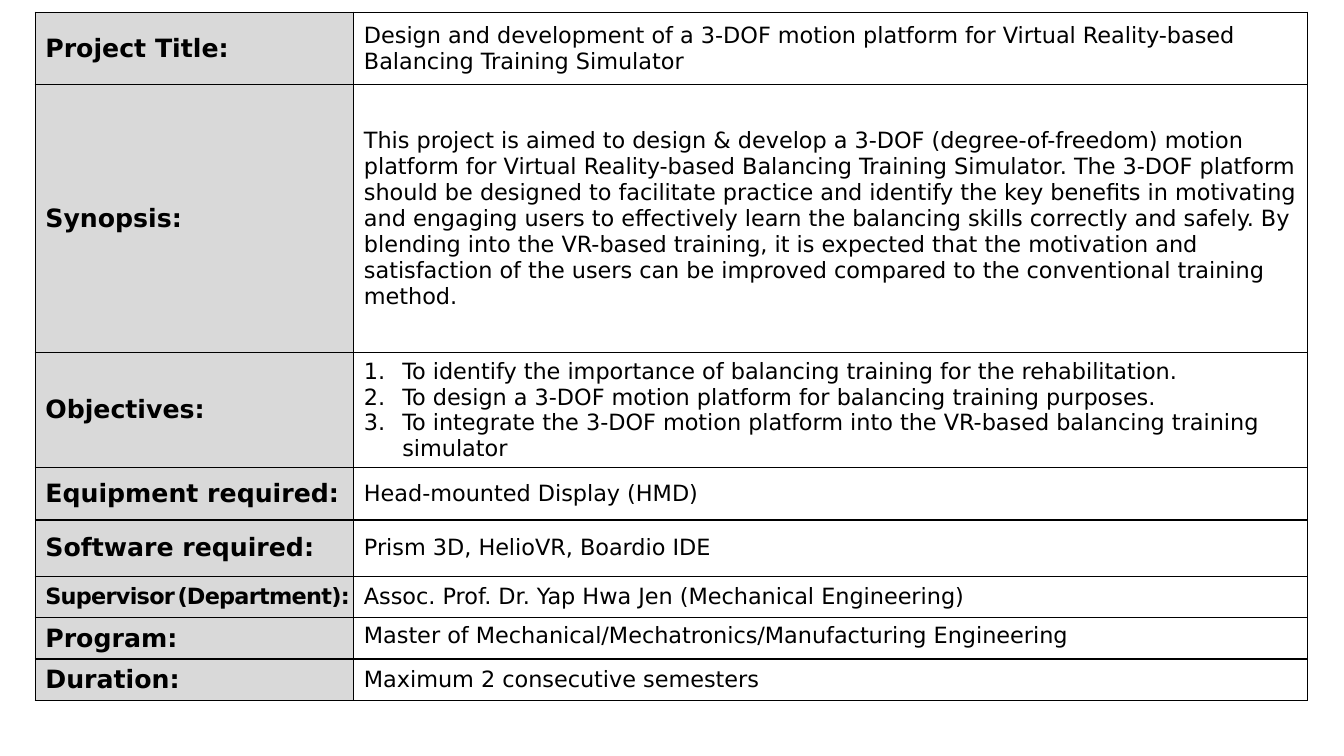
"""Build a one-slide project proposal table."""
from lxml.etree import SubElement
from pptx import Presentation
from pptx.dml.color import RGBColor
from pptx.enum.text import MSO_VERTICAL_ANCHOR as Anchor
from pptx.oxml import parse_xml
from pptx.oxml.ns import nsdecls, qn
from pptx.util import Inches, Pt

BLACK = RGBColor(0x00, 0x00, 0x00)
WHITE = RGBColor(0xFF, 0xFF, 0xFF)
LABEL_GREY = RGBColor(0xD9, 0xD9, 0xD9)
FONT = "DejaVu Sans"
LABEL_SIZE, BODY_SIZE, GAP_SIZE = 18, 16, 5
LEFT, TOP = 0.35, 0.12
COLUMNS = (3.16, 9.46)
NUMBER_INDENT = 0.38
TIGHT_SPACING = "-50"

PROJECT = (
    (0.72, "Project Title:", (
        "Design and development of a 3-DOF motion platform for Virtual "
        "Reality-based Balancing Training Simulator",)),
    (2.66, "Synopsis:", (
        "This project is aimed to design & develop a 3-DOF (degree-of-freedom) "
        "motion platform for Virtual Reality-based Balancing Training Simulator. "
        "The 3-DOF platform should be designed to facilitate practice and identify "
        "the key benefits in motivating and engaging users to effectively learn the "
        "balancing skills correctly and safely. By blending into the VR-based "
        "training, it is expected that the motivation and satisfaction of the users "
        "can be improved compared to the conventional training method.",)),
    (1.14, "Objectives:", (
        "To identify the importance of balancing training for the rehabilitation.",
        "To design a 3-DOF motion platform for balancing training purposes.",
        "To integrate the 3-DOF motion platform into the VR-based balancing "
        "training simulator")),
    (0.52, "Equipment required:", ("Head-mounted Display (HMD)",)),
    (0.56, "Software required:", ("Prism 3D, HelioVR, Boardio IDE",)),
    (0.41, "Supervisor (Department):", (
        "Assoc. Prof. Dr. Yap Hwa Jen (Mechanical Engineering)",)),
    (0.41, "Program:", (
        "Master of Mechanical/Mechatronics/Manufacturing Engineering",)),
    (0.41, "Duration:", ("Maximum 2 consecutive semesters",)),
)


def style_cell(cell, fill, anchor=Anchor.MIDDLE):
    """Fill a cell, anchor its text and rule all four sides."""
    cell.fill.solid()
    cell.fill.fore_color.rgb = fill
    cell.vertical_anchor = anchor
    properties = cell._tc.get_or_add_tcPr()
    for index, side in enumerate("LRTB"):
        properties.insert(index, parse_xml(
            f'<a:ln{side} {nsdecls("a")} w="{Pt(1)}"><a:solidFill>'
            f'<a:srgbClr val="{BLACK}"/></a:solidFill></a:ln{side}>'))


def style_font(font, size, bold=False):
    """Apply the slide's typeface and colour."""
    font.name = FONT
    font.size = Pt(size)
    font.bold = bold
    font.color.rgb = BLACK


def write_label(cell, text):
    """Write a bold row label."""
    para = cell.text_frame.paragraphs[0]
    para.text = text
    style_font(para.font, LABEL_SIZE, bold=True)


def write_tight_label(cell, text):
    """Write a condensed two-word label with a narrow gap."""
    cell.margin_right = 0
    first, gap, second = text.partition(" ")
    para = cell.text_frame.paragraphs[0]
    for part, size in ((first, BODY_SIZE), (gap, GAP_SIZE), (second, BODY_SIZE)):
        span = para.add_run()
        span.text = part
        style_font(span.font, size, bold=True)
        span._r.get_or_add_rPr().set("spc", TIGHT_SPACING)


def number_paragraph(para):
    """Give a paragraph an automatic number and hanging indent."""
    properties = para._p.get_or_add_pPr()
    properties.set("marL", str(Inches(NUMBER_INDENT)))
    properties.set("indent", str(-Inches(NUMBER_INDENT)))
    numbering = SubElement(properties, qn("a:buAutoNum"))
    numbering.set("type", "arabicPeriod")
    properties.insert(0, numbering)


def write_body(cell, lines):
    """Write the row's content, numbered when it has several lines."""
    frame = cell.text_frame
    for index, line in enumerate(lines):
        para = frame.add_paragraph() if index else frame.paragraphs[0]
        para.text = line
        style_font(para.font, BODY_SIZE)
        if len(lines) > 1:
            number_paragraph(para)


def add_project_table(page):
    """Add the label and content table."""
    heights = [height for height, _, _ in PROJECT]
    table = page.shapes.add_table(
        len(PROJECT), len(COLUMNS), Inches(LEFT), Inches(TOP),
        Inches(sum(COLUMNS)), Inches(sum(heights))).table
    table.first_row = table.horz_banding = False
    for column, width in zip(table.columns, COLUMNS):
        column.width = Inches(width)
    for row, (height, label, lines) in zip(table.rows, PROJECT):
        row.height = Inches(height)
        label_cell, body_cell = row.cells
        style_cell(label_cell, LABEL_GREY)
        style_cell(body_cell, WHITE,
                   Anchor.TOP if label == "Program:" else Anchor.MIDDLE)
        write = write_tight_label if label.startswith("Supervisor") else write_label
        write(label_cell, label)
        write_body(body_cell, lines)


def main():
    """Create and save the deck."""
    deck = Presentation()
    deck.slide_width, deck.slide_height = Inches(13.33), Inches(7.5)
    page = deck.slides.add_slide(deck.slide_layouts[6])
    add_project_table(page)
    deck.save("out.pptx")


if __name__ == "__main__":
    main()
